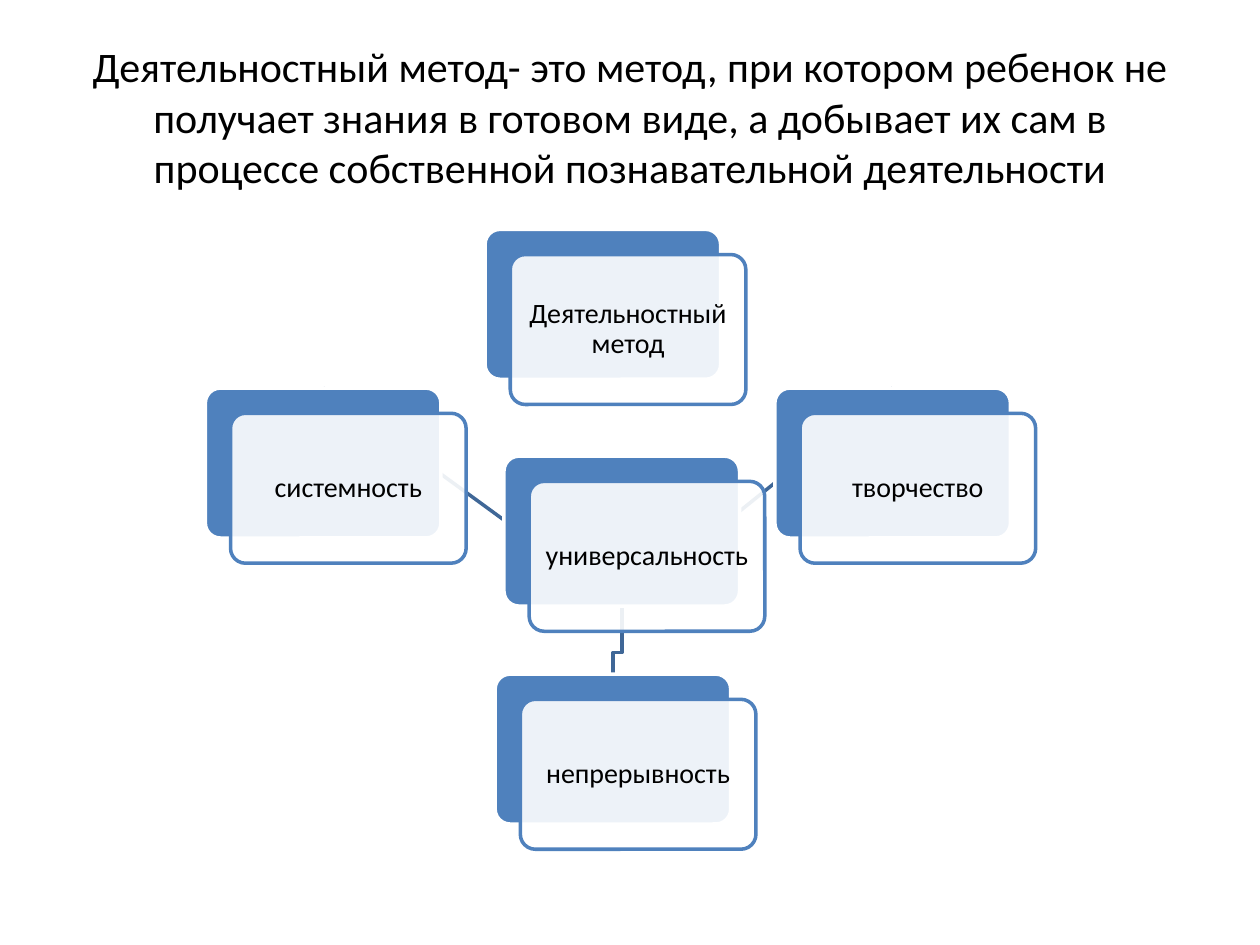
"""Build a slide on the activity method: a hub card linked to three of its principles."""
from dataclasses import dataclass

from lxml import etree
from pptx import Presentation
from pptx.dml.color import RGBColor
from pptx.enum.shapes import MSO_CONNECTOR, MSO_SHAPE
from pptx.enum.text import MSO_ANCHOR, PP_ALIGN
from pptx.oxml.ns import qn
from pptx.util import Inches, Pt

STRAIGHT = MSO_CONNECTOR.STRAIGHT
ROUNDED = MSO_SHAPE.ROUNDED_RECTANGLE
CENTER = PP_ALIGN.CENTER
MIDDLE = MSO_ANCHOR.MIDDLE
TOP_SITE, BOTTOM_SITE = 0, 2

FONT = "Calibri"
BLUE, LINK_BLUE, WHITE, BLACK = "4F81BD", "3F6797", "FFFFFF", "000000"
CARD_WIDTH, CARD_HEIGHT = 1.87, 1.19
FRONT_OFFSET = 0.2
FRONT_OPACITY = 90
TITLE = (
    "Деятельностный метод- это метод, при котором ребенок не получает знания "
    "в готовом виде, а добывает их сам в процессе собственной познавательной деятельности"
)


@dataclass(frozen=True)
class Card:
    label: str
    left: float
    top: float

    @property
    def middle(self) -> float:
        return self.left + CARD_WIDTH / 2

    @property
    def bottom(self) -> float:
        return self.top + CARD_HEIGHT


METHOD = Card("Деятельностный метод", 3.85, 1.82)
UNIVERSALITY = Card("универсальность", 4.0, 3.62)
CREATIVITY = Card("творчество", 6.15, 3.08)
CONTINUITY = Card("непрерывность", 3.93, 5.35)
CONSISTENCY = Card("системность", 1.63, 3.08)
CARDS = (METHOD, UNIVERSALITY, CREATIVITY, CONTINUITY, CONSISTENCY)


def color(value: str) -> RGBColor:
    return RGBColor.from_string(value)


def write(shape, text: str, *, size: float, spacing: float = 1.0, inset: float = 0.1) -> None:
    frame = shape.text_frame
    frame.word_wrap = True
    frame.vertical_anchor = MIDDLE
    frame.margin_left = frame.margin_right = Inches(inset)
    paragraph = frame.paragraphs[0]
    paragraph.alignment = CENTER
    paragraph.line_spacing = spacing
    run = paragraph.add_run()
    run.text = text
    run.font.name = FONT
    run.font.size = Pt(size)
    run.font.color.rgb = color(BLACK)


def style_line(line, value: str) -> None:
    line.color.rgb = color(value)
    line.width = Pt(2)


def add_panel(slide, left: float, top: float, fill: str, outline: str):
    panel = slide.shapes.add_shape(
        ROUNDED, Inches(left), Inches(top), Inches(CARD_WIDTH), Inches(CARD_HEIGHT)
    )
    panel.adjustments[0] = 0.1
    panel.shadow.inherit = False
    panel.fill.solid()
    panel.fill.fore_color.rgb = color(fill)
    style_line(panel.line, outline)
    return panel


def add_card(slide, card: Card):
    back = add_panel(slide, card.left, card.top, BLUE, WHITE)
    front = add_panel(slide, card.left + FRONT_OFFSET, card.top + FRONT_OFFSET, WHITE, BLUE)
    fill_color = front._element.spPr.find(qn("a:solidFill"))[0]
    etree.SubElement(fill_color, qn("a:alpha")).set("val", str(FRONT_OPACITY * 1000))
    write(front, card.label, size=16, spacing=0.9, inset=0.06)
    return back


def add_stepped_link(slide, start: Card, end: Card, bend: float) -> None:
    builder = slide.shapes.build_freeform(
        Inches(start.middle), Inches(start.bottom), scale=1.0
    )
    corners = ((start.middle, bend), (end.middle, bend), (end.middle, end.top))
    builder.add_line_segments([(Inches(x), Inches(y)) for x, y in corners], close=False)
    link = builder.convert_to_shape()
    link.shadow.inherit = False
    link.fill.background()
    style_line(link.line, LINK_BLUE)


def add_straight_link(slide, start, end) -> None:
    link = slide.shapes.add_connector(STRAIGHT, 0, 0, 0, 0)
    link.begin_connect(start, BOTTOM_SITE)
    link.end_connect(end, TOP_SITE)
    style_line(link.line, LINK_BLUE)
    etree.SubElement(link._element.spPr, qn("a:effectLst"))
    start._element.getparent().insert(2, link._element)


def main() -> None:
    deck = Presentation()
    deck.slide_width, deck.slide_height = Inches(10), Inches(7.5)
    slide = deck.slides.add_slide(deck.slide_layouts[5])

    title = slide.shapes.title
    title.left, title.top = Inches(0.5), Inches(0.3)
    title.width, title.height = Inches(9), Inches(1.25)
    write(title, TITLE, size=24)

    add_stepped_link(slide, UNIVERSALITY, CONTINUITY, bend=5.18)
    backs = {card: add_card(slide, card) for card in CARDS}
    for principle in (CONSISTENCY, CREATIVITY):
        add_straight_link(slide, backs[UNIVERSALITY], backs[principle])

    deck.save("out.pptx")


if __name__ == "__main__":
    main()
